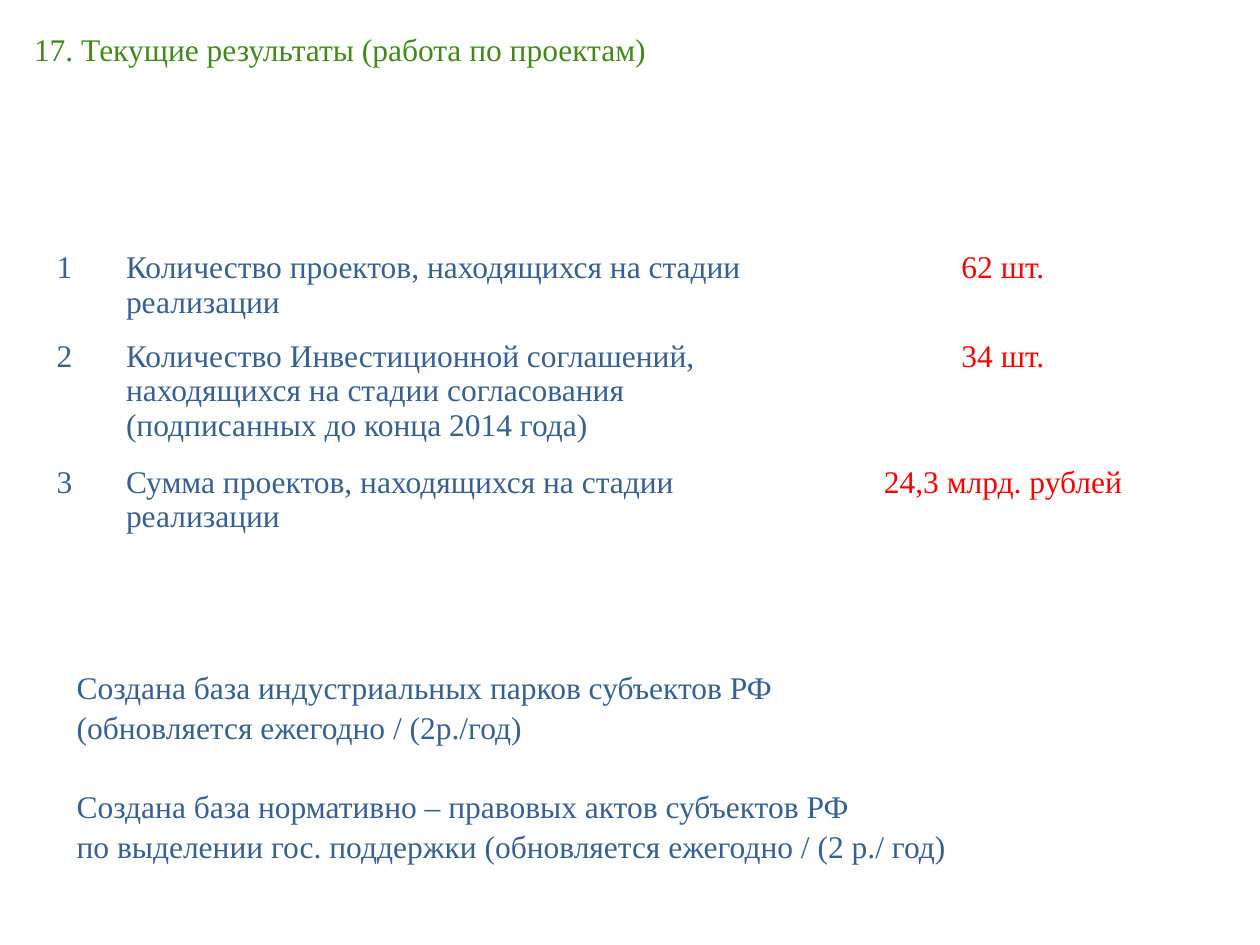
from typing import NamedTuple

from pptx import Presentation
from pptx.dml.color import RGBColor
from pptx.enum.text import MSO_ANCHOR, MSO_AUTO_SIZE, PP_ALIGN
from pptx.util import Inches, Pt

LEFT, CENTER, JUSTIFY = PP_ALIGN.LEFT, PP_ALIGN.CENTER, PP_ALIGN.JUSTIFY
TOP = MSO_ANCHOR.TOP
NO_FIT = MSO_AUTO_SIZE.NONE

FONT = "Times New Roman"
GREEN, BLUE, RED = "418A18", "376092", "FF0000"
COLS = (0.55, 5.54, 3.04)
HEAD = 0.41


class Result(NamedTuple):
    label: str
    value: str
    height: float


class Line(NamedTuple):
    text: str
    gap: float


RESULTS = (
    Result("Количество проектов, находящихся на стадии реализации", "62 шт.", 0.7),
    Result("Количество Инвестиционной соглашений, находящихся на стадии "
           "согласования (подписанных до конца 2014 года)", "34 шт.", 1.0),
    Result("Сумма проектов, находящихся на стадии реализации",
           "24,3 млрд. рублей", 0.7),
)
NOTES = (
    Line("Создана база индустриальных парков субъектов РФ", 0),
    Line("(обновляется ежегодно / (2р./год)", 1.5),
    Line("Создана база нормативно – правовых актов субъектов РФ", 23.5),
    Line("по выделении гос. поддержки (обновляется ежегодно / (2 р./ год)", 1.5),
)


def paint(font, color: str) -> None:
    font.color.rgb = RGBColor.from_string(color)


def write(para, text: str, *, color: str = BLUE, align=LEFT,
          size: float = 18, gap: float = 0) -> None:
    para.alignment = align
    para.space_before = Pt(gap)
    run = para.add_run()
    run.text = text
    run.font.name = FONT
    run.font.size = Pt(size)
    paint(run.font, color)


def setup(frame) -> None:
    frame.word_wrap = True
    frame.auto_size = NO_FIT
    frame.vertical_anchor = TOP


def add_title(slide, text: str) -> None:
    title = slide.shapes.title
    title.left, title.top = Inches(0.17), Inches(0.19)
    title.width, title.height = Inches(9.64), Inches(0.41)
    setup(title.text_frame)
    write(title.text_frame.paragraphs[0], text, color=GREEN, align=JUSTIFY)


def add_results(slide, results: tuple[Result, ...]) -> None:
    heights = [HEAD] + [item.height for item in results]
    table = slide.shapes.add_table(
        len(heights), len(COLS), Inches(0.35), Inches(1.53),
        Inches(sum(COLS)), Inches(sum(heights))).table
    table.first_row = table.horz_banding = False
    for col, width in zip(table.columns, COLS):
        col.width = Inches(width)
    for row, height in zip(table.rows, heights):
        row.height = Inches(height)
    for cell in table.iter_cells():
        cell.fill.background()
    for num, item in enumerate(results, 1):
        num_cell, label, value = (
            cell.text_frame.paragraphs[0] for cell in table.rows[num].cells)
        write(num_cell, str(num))
        write(label, item.label)
        write(value, item.value, color=RED, align=CENTER)


def add_notes(slide, notes: tuple[Line, ...]) -> None:
    frame = slide.shapes.add_textbox(
        Inches(0.51), Inches(5.25), Inches(8.82), Inches(1.62)).text_frame
    setup(frame)
    for i, line in enumerate(notes):
        para = frame.add_paragraph() if i else frame.paragraphs[0]
        write(para, line.text, align=JUSTIFY, gap=line.gap)


def main() -> None:
    deck = Presentation()
    deck.slide_width, deck.slide_height = Inches(10), Inches(7.5)
    slide = deck.slides.add_slide(deck.slide_layouts.get_by_name("Title Only"))
    add_title(slide, "17. Текущие результаты (работа по проектам)")
    add_results(slide, RESULTS)
    add_notes(slide, NOTES)
    deck.save("out.pptx")


if __name__ == "__main__":
    main()
